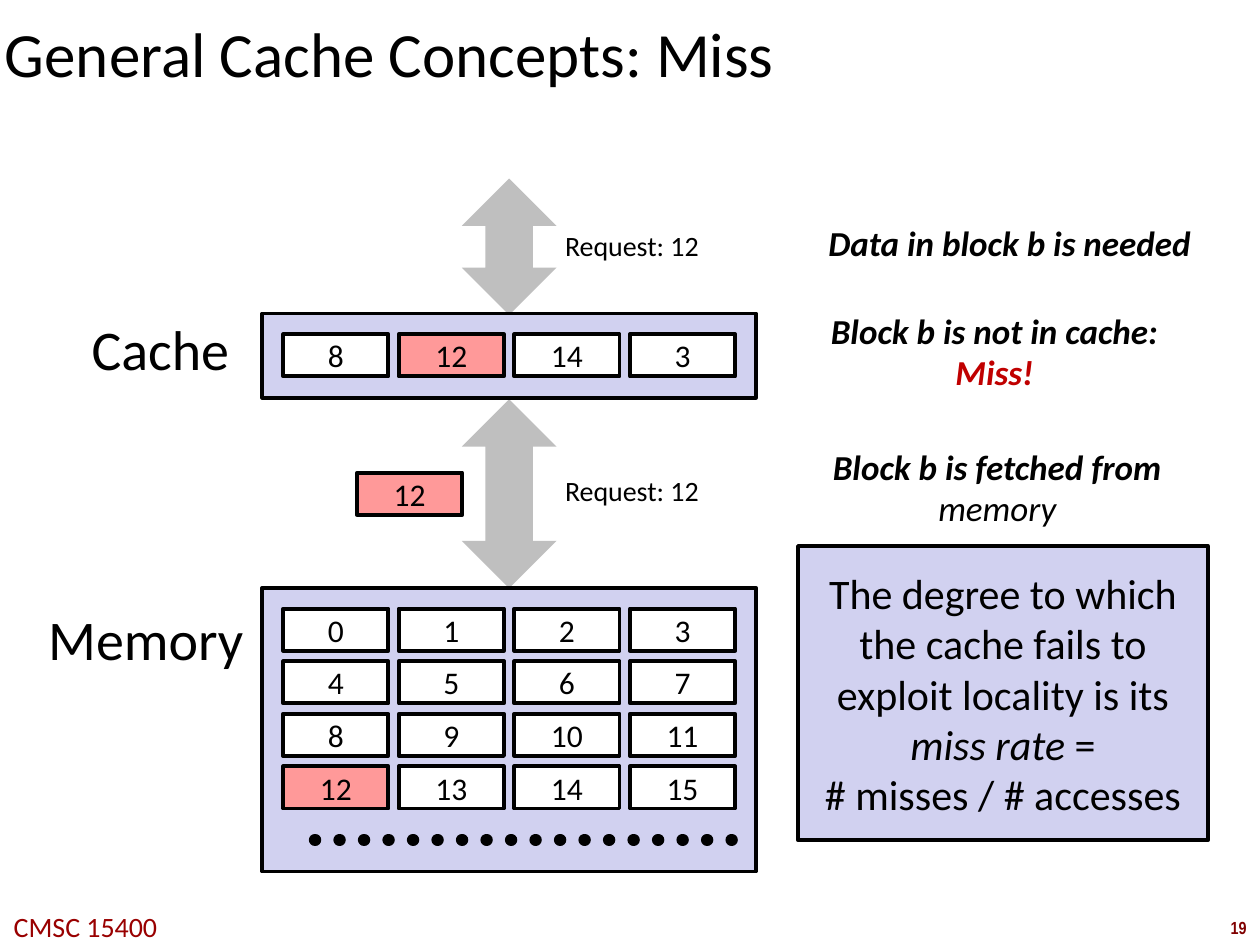
from lxml.etree import SubElement
from pptx import Presentation
from pptx.dml.color import RGBColor
from pptx.enum.dml import MSO_LINE
from pptx.enum.shapes import MSO_CONNECTOR, MSO_SHAPE
from pptx.enum.text import MSO_ANCHOR, MSO_AUTO_SIZE, PP_ALIGN
from pptx.oxml.ns import qn
from pptx.util import Cm, Pt

BLACK = RGBColor(0x00, 0x00, 0x00)
WHITE = RGBColor(0xFF, 0xFF, 0xFF)
GREY = RGBColor(0xBF, 0xBF, 0xBF)
LAVENDER = RGBColor(0xD1, 0xD1, 0xF0)
PINK = RGBColor(0xFF, 0x99, 0x99)
RED = RGBColor(0xC0, 0x00, 0x00)
DARK_RED = RGBColor(0x99, 0x00, 0x00)
MAROON = RGBColor(0x80, 0x00, 0x00)

# Block grid, in centimetres
BLOCK_WIDTH, BLOCK_HEIGHT = 2.12, 0.85
COLUMN_STEP, ROW_STEP = 2.33, 1.06
COLUMNS = 4
PADDING = 0.42
REQUESTED = 12


def add_run(paragraph, text, size, color=BLACK, bold=False, italic=False, name="Calibri"):
    run = paragraph.add_run()
    run.text = text
    font = run.font
    font.name, font.size, font.color.rgb = name, Pt(size), color
    font.bold, font.italic = bold, italic


def write_lines(text_frame, lines, size, spacing=None):
    """Write centred paragraphs; each line is a list of (text, run format)."""
    for index, runs in enumerate(lines):
        paragraph = text_frame.paragraphs[0] if index == 0 else text_frame.add_paragraph()
        paragraph.alignment = PP_ALIGN.CENTER
        if spacing:
            paragraph.line_spacing = spacing
        for text, run_format in runs:
            add_run(paragraph, text, size, **run_format)


def add_label(slide, box, lines, size, spacing=None):
    label = slide.shapes.add_textbox(*map(Cm, box))
    label.text_frame.word_wrap = False
    write_lines(label.text_frame, lines, size, spacing)


def add_box(slide, box, fill, outlined=True, preset=MSO_SHAPE.RECTANGLE):
    shape = slide.shapes.add_shape(preset, *map(Cm, box))
    shape.shadow.inherit = False
    shape.fill.solid()
    shape.fill.fore_color.rgb = fill
    if outlined:
        shape.line.color.rgb = BLACK
        shape.line.width = Pt(2.25)
    else:
        shape.line.fill.background()
    return shape


def add_block(slide, left, top, number):
    fill = PINK if number == REQUESTED else WHITE
    block = add_box(slide, (left, top, BLOCK_WIDTH, BLOCK_HEIGHT), fill)
    block.text_frame.vertical_anchor = MSO_ANCHOR.MIDDLE
    write_lines(block.text_frame, [[(str(number), {})]], 18)


def add_store(slide, box, numbers):
    """Panel holding numbered blocks, four to a row."""
    left, top, _, _ = box
    add_box(slide, box, LAVENDER)
    for index, number in enumerate(numbers):
        row, column = divmod(index, COLUMNS)
        add_block(slide, left + PADDING + column * COLUMN_STEP,
                  top + PADDING + row * ROW_STEP, number)


def add_memory(slide, box):
    add_store(slide, box, range(16))
    # Dotted line: memory continues
    left, top, width, _ = box
    y = Cm(top + 5.08)
    dots = slide.shapes.add_connector(
        MSO_CONNECTOR.STRAIGHT, Cm(left + 1.06), y, Cm(left + width - PADDING), y)
    dots.line.color.rgb = BLACK
    dots.line.width = Pt(7)
    dots.line.dash_style = MSO_LINE.ROUND_DOT
    properties = dots._element.spPr
    properties.find(qn("a:ln")).set("cap", "rnd")
    SubElement(properties, qn("a:effectLst"))


def add_transfer(slide, box, label_top):
    """Two-way arrow with the request written to its right."""
    left, top, width, _ = box
    add_box(slide, box, GREY, outlined=False, preset=MSO_SHAPE.UP_DOWN_ARROW)
    add_label(slide, (left + width - 0.13, top + label_top, 3.3, 0.94),
              [[(f"Request: {REQUESTED}", {})]], 16)


def add_miss_rate(slide, box):
    panel = add_box(slide, box, LAVENDER)
    panel.text_frame.word_wrap = True
    panel.text_frame.vertical_anchor = MSO_ANCHOR.MIDDLE
    write_lines(panel.text_frame, [
        [("The degree to which the cache fails to exploit locality is its ", {}),
         ("miss rate ", {"italic": True}), ("=", {})],
        [("# misses / # accesses", {})],
    ], 24)


def add_steps(slide):
    strong = {"bold": True, "italic": True}
    steps = [
        ((16.43, 4.39, 7.85, 1.09), [[("Data in block b is needed", strong)]]),
        ((16.48, 6.15, 7.14, 1.93), [[("Block b is not in cache:", strong)],
                                     [("Miss!", {**strong, "color": RED})]]),
        ((16.51, 8.89, 7.19, 1.93), [[("Block b is fetched from", strong)],
                                     [("memory", {"italic": True})]]),
    ]
    for box, lines in steps:
        add_label(slide, box, lines, 20, spacing=0.98)


def add_title(slide, box, text):
    title = slide.shapes.title
    title.left, title.top, title.width, title.height = map(Cm, box)
    frame = title.text_frame
    frame.auto_size = MSO_AUTO_SIZE.NONE
    frame.vertical_anchor = MSO_ANCHOR.MIDDLE
    frame.margin_left = frame.margin_right = Cm(0.1)
    frame.margin_top = frame.margin_bottom = Cm(0.1)
    frame.paragraphs[0].alignment = PP_ALIGN.LEFT
    add_run(frame.paragraphs[0], text, 36)


def add_footer(slide):
    add_label(slide, (24.54, 18.36, 0.86, 0.69),
              [[("19", {"color": MAROON, "bold": True, "name": "Arial Narrow"})]], 10)
    add_label(slide, (-0.08, 18.21, 3.61, 0.94),
              [[("CMSC 15400", {"color": DARK_RED})]], 16)


def main():
    presentation = Presentation()
    presentation.slide_width, presentation.slide_height = Cm(25.4), Cm(19.05)
    slide = presentation.slides.add_slide(presentation.slide_layouts[5])

    add_footer(slide)
    add_title(slide, (0, -2.97, 21.59, 8.03), "General Cache Concepts: Miss")

    # Requests to the cache and on to memory
    add_transfer(slide, (9.31, 3.6, 1.91, 2.75), 0.89)
    add_transfer(slide, (9.31, 8.05, 1.91, 3.81), 1.37)
    add_block(slide, 7.2, 9.53, REQUESTED)

    # Cache and memory with their names
    add_store(slide, (5.29, 6.32, 9.95, 1.7), [8, REQUESTED, 14, 3])
    add_memory(slide, (5.29, 11.85, 9.95, 5.72))
    add_label(slide, (1.57, 6.22, 3.33, 1.63), [[("Cache", {})]], 32)
    add_label(slide, (0.69, 12.07, 4.5, 1.63), [[("Memory", {})]], 32)

    # Explanation on the right
    add_steps(slide)
    add_miss_rate(slide, (16.09, 11.01, 8.26, 5.93))

    presentation.save("out.pptx")


if __name__ == "__main__":
    main()
